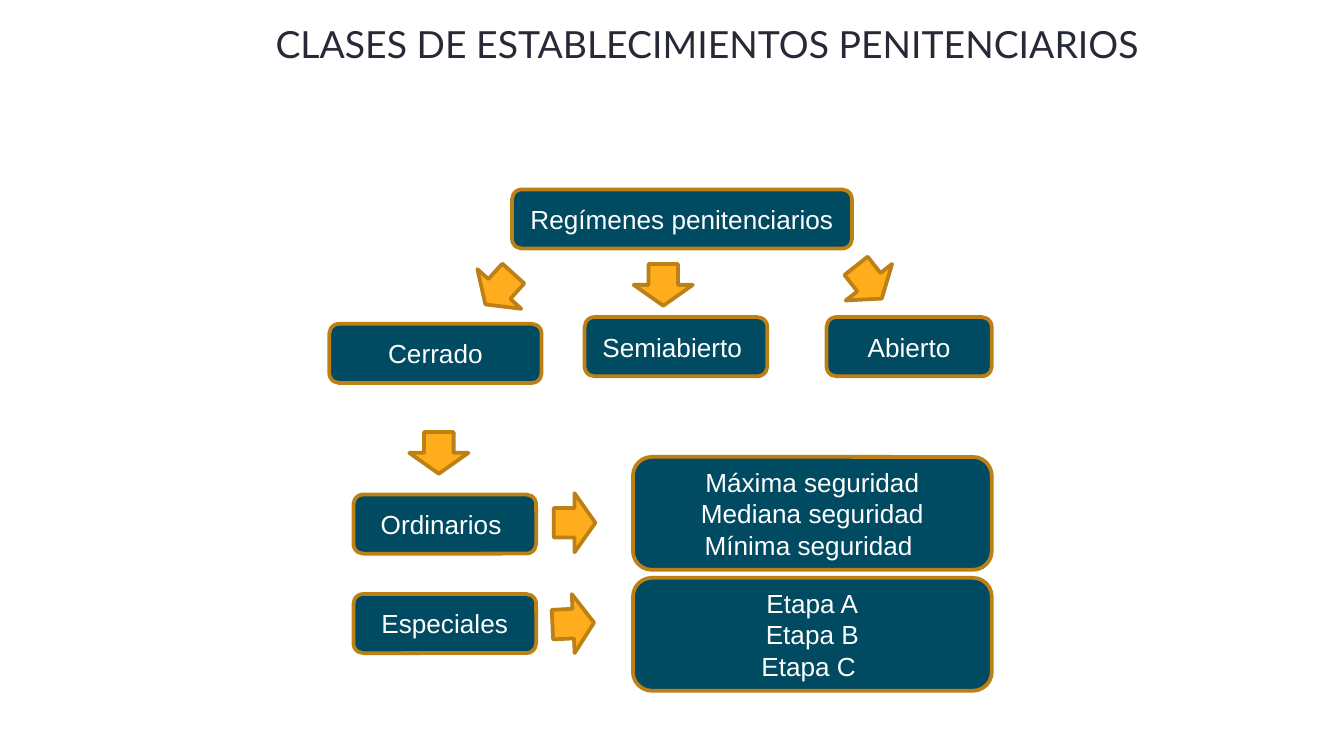
from dataclasses import dataclass
from pptx import Presentation
from pptx.dml.color import RGBColor
from pptx.enum import shapes, text
from pptx.util import Inches, Pt


@dataclass(frozen=True)
class Theme:
    teal: str = "004A62"
    amber: str = "FFAD1D"
    edge: str = "BD8015"
    white: str = "FFFFFF"
    ink: str = "272A36"
    head: int = 20
    body: int = 14
    rule: int = 2


THEME = Theme()
KIND = shapes.MSO_SHAPE
ROW = 0.44

BOXES = [
    ("Regímenes penitenciarios", 3.81, 1.41, 2.53, ROW),
    ("Cerrado", 2.45, 2.41, 1.58, ROW),
    ("Semiabierto ", 4.35, 2.36, 1.36, ROW),
    ("Abierto", 6.15, 2.36, 1.23, ROW),
    ("Ordinarios ", 2.63, 3.68, 1.36, ROW),
    ("Especiales", 2.63, 4.42, 1.36, ROW),
    ("Máxima seguridad\nMediana seguridad\nMínima seguridad ", 4.71, 3.4, 2.67, 0.84),
    ("Etapa A\nEtapa B\nEtapa C ", 4.71, 4.3, 2.67, 0.84),
]
ARROWS = [
    (3.56, 1.93, 132.1),
    (4.78, 1.9, 90),
    (6.31, 1.88, 51.8),
    (3.11, 3.15, 90),
    (4.12, 3.67, 0),
    (4.11, 4.42, 357.2),
]


def style(par, face, size, color):
    for run in par.runs:
        run.font.name = face
        run.font.size = Pt(size)
        run.font.color.rgb = RGBColor.from_string(color)


def add_shape(slide, kind, area, fill):
    shape = slide.shapes.add_shape(kind, *map(Inches, area))
    shape.shadow.inherit = False
    shape.fill.solid()
    shape.fill.fore_color.rgb = RGBColor.from_string(fill)
    shape.line.color.rgb = RGBColor.from_string(THEME.edge)
    shape.line.width = Pt(THEME.rule)
    return shape


def add_box(slide, label, *area):
    box = add_shape(slide, KIND.ROUNDED_RECTANGLE, area, THEME.teal)
    frame = box.text_frame
    frame.text = label
    frame.word_wrap = True
    frame.vertical_anchor = text.MSO_ANCHOR.MIDDLE
    for par in frame.paragraphs:
        par.alignment = text.PP_ALIGN.CENTER
        style(par, "Arial", THEME.body, THEME.white)


def add_arrow(slide, left, top, angle):
    arrow = add_shape(slide, KIND.RIGHT_ARROW, (left, top, 0.31, ROW), THEME.amber)
    arrow.rotation = angle


def add_title(slide, label):
    box = slide.shapes.add_textbox(*map(Inches, (2.05, -0.01, 8.58, 0.71)))
    frame = box.text_frame
    frame.text = label
    frame.word_wrap = True
    frame.vertical_anchor = text.MSO_ANCHOR.MIDDLE
    frame.margin_left = frame.margin_right = 0
    frame.margin_top = frame.margin_bottom = 0
    par = frame.paragraphs[0]
    par.line_spacing = 0.9
    style(par, "Lato", THEME.head, THEME.ink)


def main():
    deck = Presentation()
    deck.slide_width, deck.slide_height = Inches(10), Inches(10 * 9 / 16)
    slide = deck.slides.add_slide(deck.slide_layouts[6])
    for box in BOXES:
        add_box(slide, *box)
    for arrow in ARROWS:
        add_arrow(slide, *arrow)
    add_title(slide, "CLASES DE ESTABLECIMIENTOS PENITENCIARIOS")
    deck.save("out.pptx")


if __name__ == "__main__":
    main()
